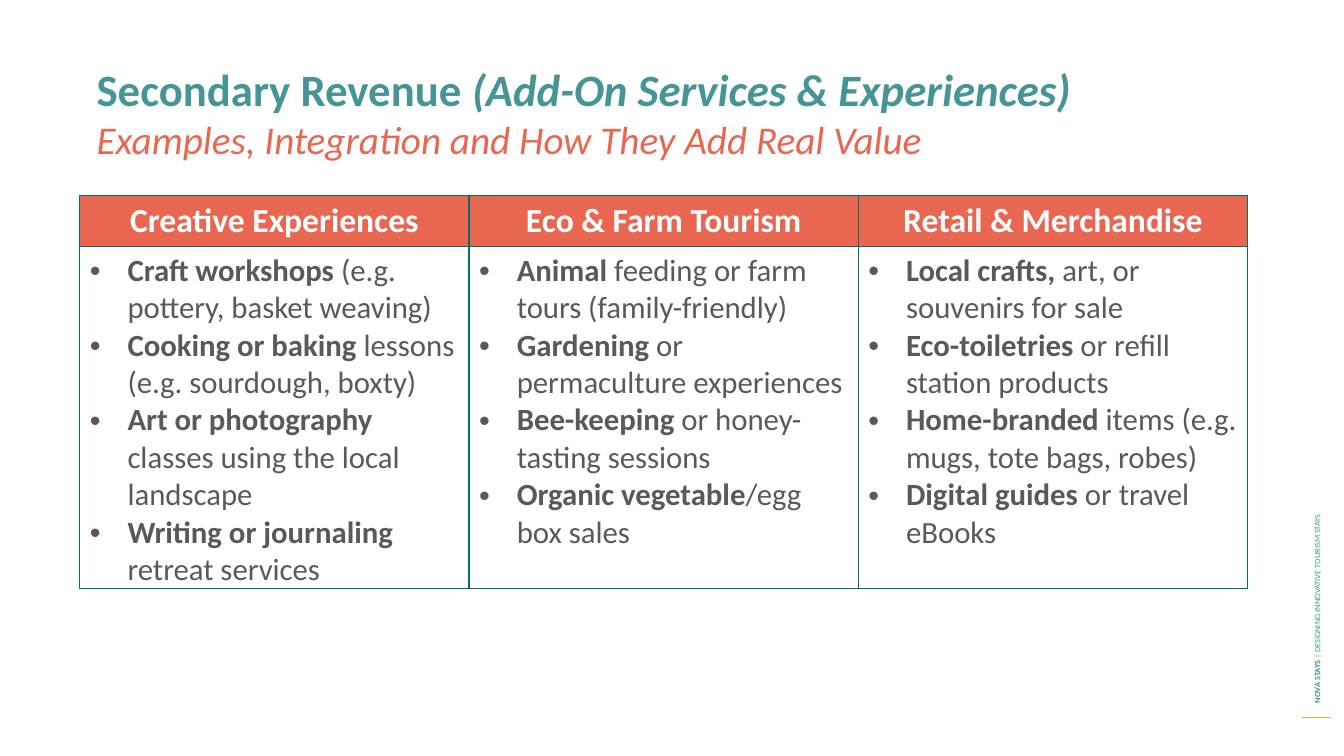
from lxml.etree import SubElement
from pptx import Presentation
from pptx.dml.color import RGBColor
from pptx.enum.shapes import MSO_CONNECTOR
from pptx.enum.text import MSO_ANCHOR, MSO_AUTO_SIZE, PP_ALIGN
from pptx.oxml.ns import qn
from pptx.util import Cm, Pt

COLORS = {
    "teal": "459597",
    "coral": "E96751",
    "amber": "FBA63B",
    "border": "086D6E",
    "body": "595959",
    "white": "FFFFFF",
}
FONT = "Calibri"

# Header, then (bold lead, rest) for each bullet
REVENUE_COLUMNS = [
    ("Creative Experiences", [
        ("Craft workshops ", "(e.g. pottery, basket weaving)"),
        ("Cooking or baking ", "lessons (e.g. sourdough, boxty)"),
        ("Art or photography ", "classes using the local landscape"),
        ("Writing or journaling ", "retreat services"),
    ]),
    ("Eco & Farm Tourism", [
        ("Animal", " feeding or farm tours (family-friendly)"),
        ("Gardening ", "or permaculture experiences"),
        ("Bee-keeping", " or honey-tasting sessions"),
        ("Organic vegetable", "/egg box sales"),
    ]),
    ("Retail & Merchandise", [
        ("Local crafts, ", "art, or souvenirs for sale"),
        ("Eco-toiletries", " or refill station products"),
        ("Home-branded", " items (e.g. mugs, tote bags, robes)"),
        ("Digital guides ", "or travel eBooks"),
    ]),
]


def set_font(target, size, color, bold=None, italic=None):
    font = target.font
    font.name, font.size = FONT, Pt(size)
    font.color.rgb = RGBColor.from_string(COLORS[color])
    font.bold, font.italic = bold, italic


def add_borders(cell):
    properties = cell._tc.get_or_add_tcPr()
    for position, side in enumerate(("lnL", "lnR", "lnT", "lnB")):
        border = properties.makeelement(qn(f"a:{side}"), {"w": str(Pt(1))})
        fill = SubElement(border, qn("a:solidFill"))
        SubElement(fill, qn("a:srgbClr"), val=COLORS["border"])
        properties.insert(position, border)


prs = Presentation()
prs.slide_width, prs.slide_height = Cm(33.87), Cm(19.05)
slide = prs.slides.add_slide(prs.slide_layouts[5])

# Side footer
footer_rule = slide.shapes.add_connector(
    MSO_CONNECTOR.STRAIGHT, Cm(32.82), Cm(18.08), Cm(33.55), Cm(18.08))
footer_rule.line.color.rgb = RGBColor.from_string(COLORS["amber"])
footer_rule.line.width = Pt(0.75)
SubElement(footer_rule._element.spPr, qn("a:effectLst"))

footer = slide.shapes.add_textbox(Cm(25.86), Cm(10.39), Cm(14.66), Cm(0.5))
footer.rotation = 270
footer.text_frame.word_wrap = True
footer.text_frame.vertical_anchor = MSO_ANCHOR.MIDDLE
for text, color, bold in (
    ("NOVA STAYS ", "teal", True),
    ("| ", "amber", True),
    ("DESIGNING INNOVATIVE TOURISM STAYS", "teal", False),
):
    run = footer.text_frame.paragraphs[0].add_run()
    run.text = text
    set_font(run, 6, color, bold)

# Title and subtitle
title = slide.shapes.title
title.left, title.top, title.width, title.height = Cm(2.18), Cm(1.42), Cm(29.49), Cm(2.24)
heading = title.text_frame
heading.word_wrap = True
heading.auto_size = MSO_AUTO_SIZE.NONE
heading.vertical_anchor = MSO_ANCHOR.TOP
topic = heading.paragraphs[0]
topic.alignment = PP_ALIGN.LEFT
set_font(topic, 32, "teal", bold=True)
topic.add_run().text = "Secondary Revenue "
topic_detail = topic.add_run()
topic_detail.text = "(Add-On Services & Experiences)"
topic_detail.font.italic = True
subtitle = heading.add_paragraph()
subtitle.alignment = PP_ALIGN.LEFT
set_font(subtitle, 28, "coral", bold=False, italic=True)
subtitle.add_run().text = "Examples, Integration and How They Add Real Value"

# Revenue table
table = slide.shapes.add_table(
    2, len(REVENUE_COLUMNS), Cm(2.01), Cm(4.93), Cm(29.43), Cm(9.91)).table
table.horz_banding = False
table.rows[0].height, table.rows[1].height = Cm(1.29), Cm(8.62)
for index, (category, services) in enumerate(REVENUE_COLUMNS):
    table.columns[index].width = Cm(9.81)

    header = table.cell(0, index)
    header.fill.solid()
    header.fill.fore_color.rgb = RGBColor.from_string(COLORS["coral"])
    add_borders(header)
    header.text = category
    label = header.text_frame.paragraphs[0]
    label.alignment = PP_ALIGN.CENTER
    set_font(label, 24, "white", bold=True)

    body = table.cell(1, index)
    body.margin_bottom = 0
    body.fill.background()
    add_borders(body)
    for number, (lead, rest) in enumerate(services):
        frame = body.text_frame
        service = frame.add_paragraph() if number else frame.paragraphs[0]
        indents = service._p.get_or_add_pPr()
        indents.set("marL", str(Cm(0.95)))
        indents.set("indent", str(-Cm(0.95)))
        SubElement(indents, qn("a:buFont"), typeface="Arial")
        SubElement(indents, qn("a:buChar"), char="•")
        set_font(service, 22, "body")
        for text, bold in ((lead, True), (rest, False)):
            run = service.add_run()
            run.text = text
            run.font.bold = bold

prs.save("out.pptx")
